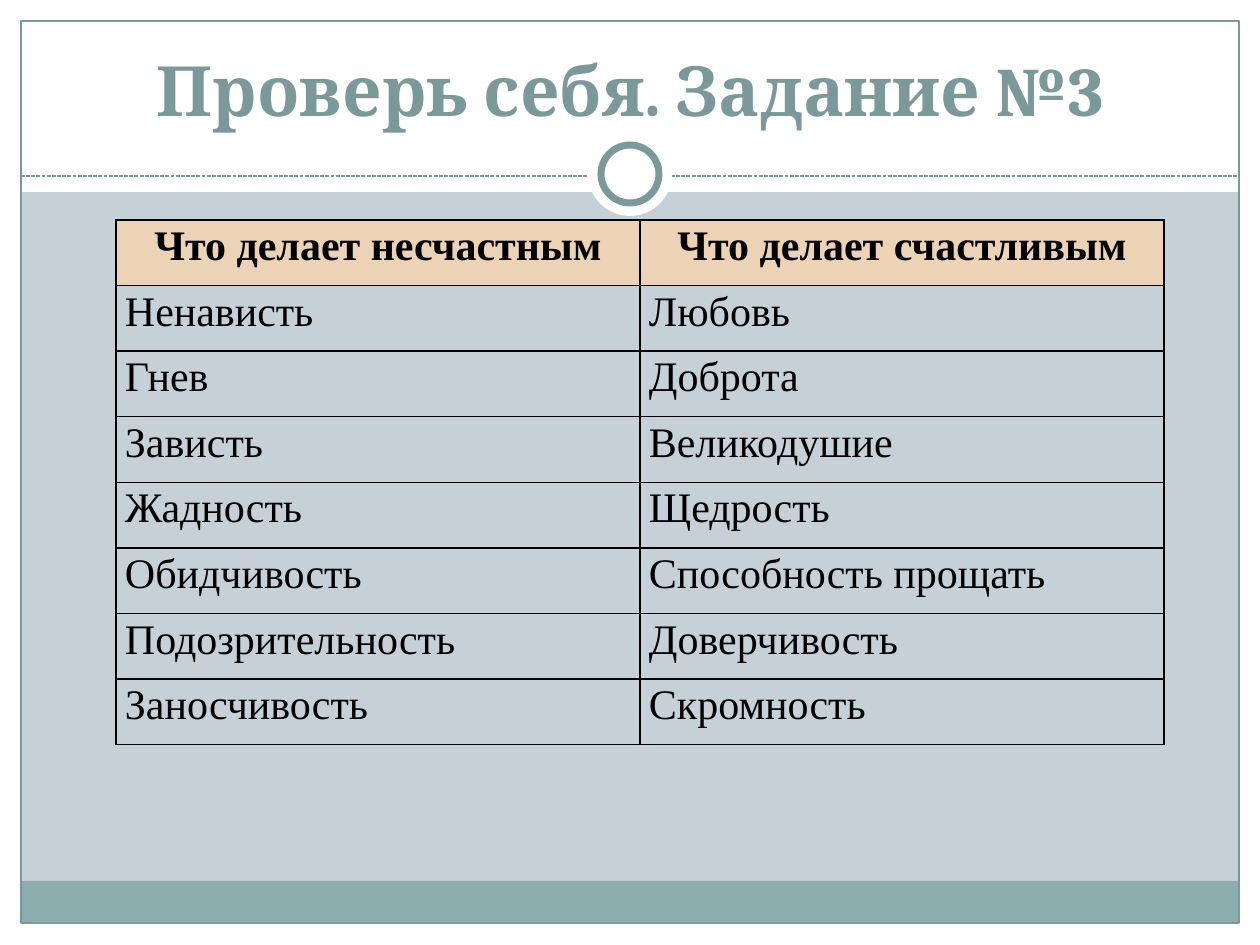
from lxml import etree
from pptx import Presentation
from pptx import util as u
from pptx.dml import color
from pptx.enum import dml, shapes, text
from pptx.oxml import ns

PX = 7257
TEAL = "7C999A"
WHITE = "FFFFFF"


def paint(fill, tint):
    if tint:
        fill.solid()
        fill.fore_color.rgb = color.RGBColor.from_string(tint)
    else:
        fill.background()


def write(frame, words, font="Times New Roman", size=24, tint="000000",
          bold=False, align=text.PP_ALIGN.LEFT, space=1.0):
    para = frame.paragraphs[0]
    para.alignment = align
    para.line_spacing = space
    run = para.add_run()
    run.text = words
    run.font.name = font
    run.font.size = u.Pt(size)
    run.font.bold = bold
    paint(run.font.fill, tint)


deck = Presentation()
deck.slide_width = 1260 * PX
deck.slide_height = 945 * PX
slide = deck.slides.add_slide(deck.slide_layouts[6])
paint(slide.background.fill, "C5D1D7")
items = slide.shapes

rect = shapes.MSO_SHAPE.RECTANGLE
oval = shapes.MSO_SHAPE.OVAL
under = [
    (rect, (0, 924, 1260, 21), WHITE, 0),
    (rect, (0, 0, 1260, 192), WHITE, 0),
    (rect, (0, 0, 21, 945), WHITE, 0),
    (rect, (1239, 0, 21, 945), WHITE, 0),
    (rect, (21, 881, 1217, 43), "8CADAE", 0),
    (rect, (21, 21, 1218, 902), None, 0.75),
]
rings = [
    (oval, (588, 132, 84, 84), WHITE, 0),
    (oval, (601, 145, 58, 58), WHITE, 4),
]

for group in (under, rings):
    for kind, box, tint, width in group:
        shape = items.add_shape(kind, *[n * PX for n in box])
        shape.shadow.inherit = False
        paint(shape.fill, tint)
        paint(shape.line.fill, TEAL if width else None)
        if width:
            shape.line.width = u.Pt(width)
    if group is under:
        rule = items.add_connector(shapes.MSO_CONNECTOR.STRAIGHT,
                                   21 * PX, 176 * PX, 1239 * PX, 176 * PX)
        paint(rule.line.fill, TEAL)
        rule.line.width = u.Pt(0.75)
        rule.line.dash_style = dml.MSO_LINE.SQUARE_DOT
        etree.SubElement(rule.element.spPr, ns.qn("a:effectLst"))

title = items.add_textbox(42 * PX, 32 * PX, 1176 * PX, 105 * PX).text_frame
title.word_wrap = True
title.vertical_anchor = text.MSO_ANCHOR.BOTTOM
write(title, "Проверь себя. Задание №3", font="Cambria", size=39.6,
      tint=TEAL, bold=True, align=text.PP_ALIGN.CENTER)

pairs = [
    ("Что делает несчастным", "Что делает счастливым"),
    ("Ненависть", "Любовь"),
    ("Гнев", "Доброта"),
    ("Зависть", "Великодушие"),
    ("Жадность", "Щедрость"),
    ("Обидчивость", "Способность прощать"),
    ("Подозрительность", "Доверчивость"),
    ("Заносчивость", "Скромность"),
]
table = items.add_table(len(pairs), 2, 116 * PX, 220 * PX,
                        1048 * PX, 525 * PX).table
table.first_row = False
table.horz_banding = False

for row, pair in enumerate(pairs):
    head = row == 0
    for col, words in enumerate(pair):
        cell = table.cell(row, col)
        cell.margin_left = cell.margin_right = 9 * PX
        cell.margin_top = cell.margin_bottom = 0
        write(cell.text_frame, words, bold=head, space=1.07,
              align=text.PP_ALIGN.CENTER if head else text.PP_ALIGN.LEFT)
        props = cell._tc.get_or_add_tcPr()
        for side in ("lnL", "lnR", "lnT", "lnB"):
            edge = etree.SubElement(props, ns.qn("a:" + side), w=str(u.Pt(1)))
            fill = etree.SubElement(edge, ns.qn("a:solidFill"))
            etree.SubElement(fill, ns.qn("a:srgbClr"), val="000000")
        paint(cell.fill, "EDD3B6" if head else None)

deck.save("out.pptx")
